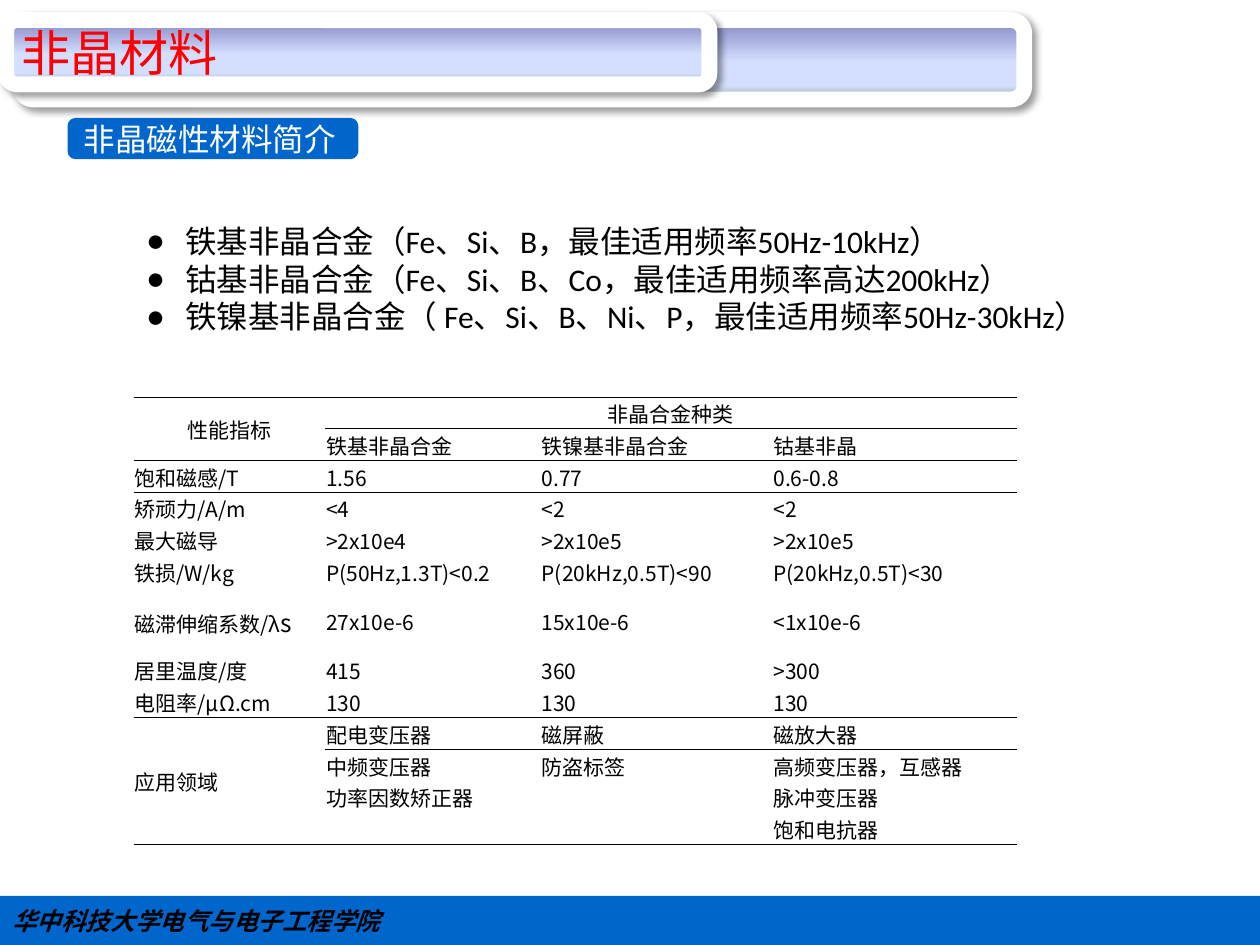
import dataclasses

import lxml.etree
import pptx
import pptx.dml.color
import pptx.enum.shapes
import pptx.enum.text
import pptx.oxml
import pptx.oxml.ns
import pptx.util

Inches = pptx.util.Inches
Pt = pptx.util.Pt
qn = pptx.oxml.ns.qn
Align = pptx.enum.text.PP_ALIGN
Anchor = pptx.enum.text.MSO_ANCHOR
Preset = pptx.enum.shapes.MSO_SHAPE


@dataclasses.dataclass(frozen=True)
class Theme:
    blue: str = "0066CC"
    white: str = "FFFFFF"
    black: str = "000000"
    red: str = "FF0000"
    banner_stops: tuple = ((0, "8488C4"), (53, "D4DEFF"), (83, "D4DEFF"), (100, "96AB94"))
    east_asian: str = "Noto Sans CJK SC"
    title_font: str = "Arial"
    body_font: str = "Calibri"
    title_size: int = 28
    body_size: int = 18
    footer_size: int = 14
    symbol_size: int = 14
    table_size: int = 12


THEME = Theme()
NO_TABLE_STYLE = "{2D5ABB26-0587-4C30-8999-92F81FD0307C}"

BULLETS = [
    "铁基非晶合金（Fe、Si、B，最佳适用频率50Hz-10kHz）",
    "钴基非晶合金（Fe、Si、B、Co，最佳适用频率高达200kHz）",
    "铁镍基非晶合金（ Fe、Si、B、Ni、P，最佳适用频率50Hz-30kHz）",
]
ALLOY_ROWS = [
    ["性能指标", "非晶合金种类", "", ""],
    ["", "铁基非晶合金", "铁镍基非晶合金", "钴基非晶"],
    ["饱和磁感/T", "1.56", "0.77", "0.6-0.8"],
    ["矫顽力/A/m", "<4", "<2", "<2"],
    ["最大磁导", ">2x10e4", ">2x10e5", ">2x10e5"],
    ["铁损/W/kg", "P(50Hz,1.3T)<0.2", "P(20kHz,0.5T)<90", "P(20kHz,0.5T)<30"],
    ["磁滞伸缩系数/λ", "27x10e-6", "15x10e-6", "<1x10e-6"],
    ["居里温度/度", "415", "360", ">300"],
    ["电阻率/μΩ.cm", "130", "130", "130"],
    ["应用领域", "配电变压器", "磁屏蔽", "磁放大器"],
    ["", "中频变压器", "防盗标签", "高频变压器，互感器"],
    ["", "功率因数矫正器", "", "脉冲变压器"],
    ["", "", "", "饱和电抗器"],
]
COLUMN_WIDTHS = [1.52, 1.71, 1.84, 1.94]
STRICTION_ROW = 6
MERGES = [((0, 0), (1, 0)), ((0, 1), (0, 3)), ((9, 0), (12, 0))]
RULED_ROWS = {0, 1, 8, 12}  # rows with a line below


def rgb(color):
    return pptx.dml.color.RGBColor.from_string(color)


def write(paragraph, text, *, size, font, color=THEME.black, align=None, bold=None, italic=None):
    """Append a formatted run; empty text only sets the height of the line."""
    if align is not None:
        paragraph.alignment = align
    if not text:
        paragraph._p.get_or_add_endParaRPr().set("sz", str(size * 100))
        return
    run = paragraph.add_run()
    run.text = text
    run.font.size = Pt(size)
    run.font.bold = bold
    run.font.italic = italic
    run.font.color.rgb = rgb(color)
    run.font.name = font
    east_asian = lxml.etree.SubElement(run.font._element, qn("a:ea"))
    east_asian.set("typeface", THEME.east_asian)


def add_bullet(paragraph, indent):
    properties = paragraph._p.get_or_add_pPr()
    properties.set("marL", str(indent))
    properties.set("indent", str(-indent))
    lxml.etree.SubElement(properties, qn("a:buFont")).set("typeface", THEME.title_font)
    lxml.etree.SubElement(properties, qn("a:buChar")).set("char", "●")


def add_rule(cell, side):
    """Draw a thin line on one side of a cell; side is T or B."""
    line = pptx.oxml.parse_xml(
        f'<a:ln{side} {pptx.oxml.ns.nsdecls("a")} w="{Pt(0.5)}"><a:solidFill>'
        f'<a:srgbClr val="{THEME.black}"/></a:solidFill></a:ln{side}>')
    cell._tc.get_or_add_tcPr().append(line)


class SlideBuilder:
    """Holds the theme and the slide being filled."""

    def __init__(self, slide, theme):
        self.slide = slide
        self.theme = theme

    def place(self, shape, left, top, width, height):
        shape.left, shape.top = Inches(left), Inches(top)
        shape.width, shape.height = Inches(width), Inches(height)

    def box(self, preset, bounds, text="", line_width=0, **text_format):
        shape = self.slide.shapes.add_shape(preset, *map(Inches, bounds))
        shape.shadow.inherit = False
        shape.fill.solid()
        shape.fill.fore_color.rgb = rgb(self.theme.blue)
        if line_width:
            shape.line.color.rgb = rgb(self.theme.blue)
            shape.line.width = Pt(line_width)
        else:
            shape.line.fill.background()
        if text:
            shape.text_frame.vertical_anchor = Anchor.MIDDLE
            shape.text_frame.word_wrap = False
            write(shape.text_frame.paragraphs[0], text, align=Align.LEFT, **text_format)

    def banner(self, *bounds):
        shape = self.slide.shapes.add_shape(Preset.ROUNDED_RECTANGLE, *map(Inches, bounds))
        shape.shadow.inherit = False
        shape.line.color.rgb = rgb(self.theme.white)
        shape.line.width = Pt(9)
        shape.fill.gradient()
        shape.fill.gradient_angle = 270
        properties = shape._element.spPr
        stops = properties.find(".//" + qn("a:gsLst"))
        stops.clear()
        for position, color in self.theme.banner_stops:
            stop = lxml.etree.SubElement(stops, qn("a:gs"), pos=str(position * 1000))
            lxml.etree.SubElement(stop, qn("a:srgbClr"), val=color)
        shadow = lxml.etree.SubElement(
            properties.find(qn("a:effectLst")), qn("a:outerShdw"),
            blurRad=str(Pt(4)), dist=str(Pt(3)), dir=str(45 * 60000), rotWithShape="0")
        color = lxml.etree.SubElement(shadow, qn("a:srgbClr"), val=self.theme.black)
        lxml.etree.SubElement(color, qn("a:alpha"), val="40000")

    def title(self, text, *bounds):
        title = self.slide.shapes.title
        self.place(title, *bounds)
        self.slide.shapes._spTree.append(title._element)  # in front of the banner
        title.text_frame.auto_size = pptx.enum.text.MSO_AUTO_SIZE.NONE
        title.text_frame.vertical_anchor = Anchor.MIDDLE
        write(title.text_frame.paragraphs[0], text, size=self.theme.title_size,
              font=self.theme.title_font, color=self.theme.red, align=Align.JUSTIFY)

    def bullets(self, items, *bounds):
        body = self.slide.placeholders[1]
        self.place(body, *bounds)
        frame = body.text_frame
        frame.auto_size = pptx.enum.text.MSO_AUTO_SIZE.NONE
        for index, item in enumerate(items):
            paragraph = frame.add_paragraph() if index else frame.paragraphs[0]
            add_bullet(paragraph, Inches(0.31))
            paragraph.space_before = Pt(0)
            write(paragraph, item, size=self.theme.body_size, font=self.theme.body_font)

    def table(self, rows, *bounds):
        graphic = self.slide.shapes.add_table(len(rows), len(rows[0]), *map(Inches, bounds))
        table = graphic.table
        table.first_row = table.horz_banding = False
        table._tbl.tblPr.find(qn("a:tableStyleId")).text = NO_TABLE_STYLE
        for column, width in zip(table.columns, COLUMN_WIDTHS):
            column.width = Inches(width)
        for row_index, texts in enumerate(rows):
            table.rows[row_index].height = Inches(0.53 if row_index == STRICTION_ROW else 0.25)
            for column_index, text in enumerate(texts):
                self.fill_cell(table.cell(row_index, column_index), text, row_index)
        write(table.cell(STRICTION_ROW, 0).text_frame.paragraphs[0], "s",
              size=self.theme.symbol_size, font=self.theme.east_asian)
        for first, last in MERGES:
            table.cell(*first).merge(table.cell(*last))
            if first[0] == 0:
                table.cell(*first).text_frame.paragraphs[0].alignment = Align.CENTER
        for first, last in (MERGES[0], MERGES[2]):
            add_rule_cell = table.cell(*first)
            if add_rule_cell._tc.tcPr.find(qn("a:lnB")) is None:
                line_cell = add_rule_cell._tc.tcPr
                add_rule(add_rule_cell, "B")
                line_cell.append(line_cell.find(qn("a:solidFill")))

    def fill_cell(self, cell, text, row_index):
        cell.margin_left = cell.margin_right = cell.margin_top = Inches(0.01)
        cell.margin_bottom = 0
        cell.vertical_anchor = Anchor.MIDDLE
        if row_index - 1 in RULED_ROWS or row_index == 0:
            add_rule(cell, "T")
        if row_index in RULED_ROWS and text != "性能指标":
            add_rule(cell, "B")
        cell.fill.solid()
        cell.fill.fore_color.rgb = rgb(self.theme.white)
        write(cell.text_frame.paragraphs[0], text, size=self.theme.table_size,
              font=self.theme.east_asian)


def main():
    presentation = pptx.Presentation()
    presentation.slide_width, presentation.slide_height = Inches(10), Inches(7.5)
    slide = presentation.slides.add_slide(presentation.slide_layouts[1])
    builder = SlideBuilder(slide, THEME)
    builder.banner(0.16, 0.16, 7.97, 0.63)
    builder.box(Preset.RECTANGLE, (0, 7.11, 10, 0.39), "华中科技大学电气与电子工程学院",
                size=THEME.footer_size, font=THEME.east_asian, bold=True, italic=True)
    builder.banner(0.05, 0.16, 5.58, 0.51)
    builder.title("非晶材料", 0.07, 0.16, 5.54, 0.51)
    builder.box(Preset.ROUNDED_RECTANGLE, (0.55, 0.95, 2.28, 0.3), "非晶磁性材料简介", line_width=2,
                size=THEME.body_size, font=THEME.body_font, color=THEME.white)
    builder.table(ALLOY_ROWS, 1.06, 3.15, 7.01, 3.52)
    builder.bullets(BULLETS, 1.06, 1.71, 9.13, 1.01)
    presentation.save("out.pptx")


if __name__ == "__main__":
    main()
